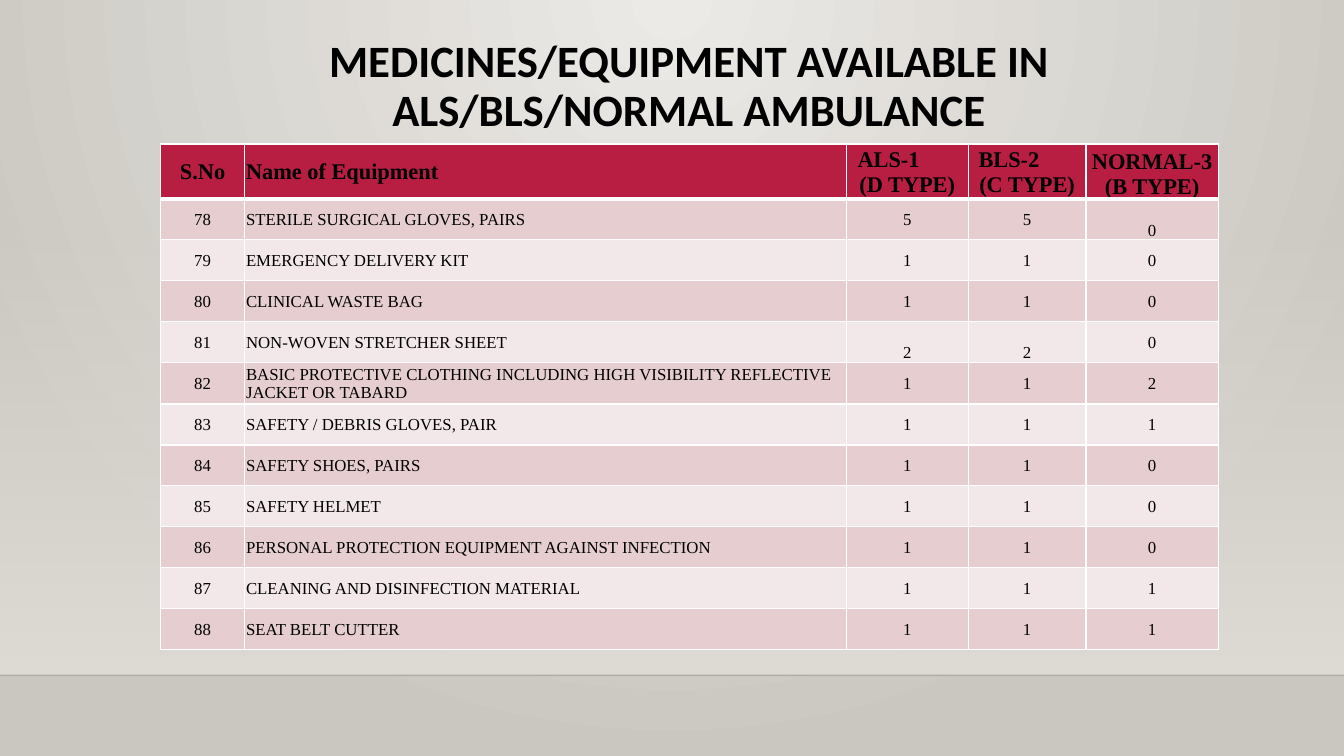
from lxml import etree
from pptx import Presentation
from pptx.dml.color import RGBColor
from pptx.enum.shapes import MSO_CONNECTOR, MSO_SHAPE
from pptx.enum.text import MSO_ANCHOR, PP_ALIGN
from pptx.oxml.ns import qn
from pptx.util import Cm, Pt

LEFT, CENTER = PP_ALIGN.LEFT, PP_ALIGN.CENTER
MIDDLE, BOTTOM = MSO_ANCHOR.MIDDLE, MSO_ANCHOR.BOTTOM
RECT, LINE = MSO_SHAPE.RECTANGLE, MSO_CONNECTOR.STRAIGHT

WIDE, HIGH = 33.87, 19.05
COLORS = {
    "glow": "ECEAE7", "edge": "CAC7C1", "wall": "DFDBD5", "floor": "000001",
    "text": "000000", "rule": "FFFFFF",
    "head": "B71E42", "odd": "E6CDCF", "even": "F3E8E9",
}
TITLE = "MEDICINES/EQUIPMENT AVAILABLE IN ALS/BLS/NORMAL AMBULANCE"
HEAD = ("S.No", "Name of Equipment", "ALS-1\n(D TYPE)", "BLS-2\n(C TYPE)",
        "NORMAL-3\n(B TYPE)")
FIRST = 78
ITEMS = (
    ("STERILE SURGICAL GLOVES, PAIRS", 5, 5, 0),
    ("EMERGENCY DELIVERY KIT", 1, 1, 0),
    ("CLINICAL WASTE BAG", 1, 1, 0),
    ("NON-WOVEN STRETCHER SHEET", 2, 2, 0),
    ("BASIC PROTECTIVE CLOTHING INCLUDING HIGH VISIBILITY REFLECTIVE "
     "JACKET OR TABARD", 1, 1, 2),
    ("SAFETY / DEBRIS GLOVES, PAIR", 1, 1, 1),
    ("SAFETY SHOES, PAIRS", 1, 1, 0),
    ("SAFETY HELMET", 1, 1, 0),
    ("PERSONAL PROTECTION EQUIPMENT AGAINST INFECTION", 1, 1, 0),
    ("CLEANING AND DISINFECTION MATERIAL", 1, 1, 1),
    ("SEAT BELT CUTTER", 1, 1, 1),
)
COLS = (2.13, 15.16, 3.07, 2.97, 3.33)
HEAD_ROW, ITEM_ROW = 1.28, 1.03
LOW = {(0, 4), (1, 4), (4, 2), (4, 3)}
INDENT = {"ALS-1": 0.25, "BLS-2": 0.23}


def color(name):
    return RGBColor.from_string(COLORS[name])


def place(box):
    return [Cm(n) for n in box]


def blend(fill, start, end):
    fill.gradient()
    for stop, name in zip(fill.gradient_stops, (start, end)):
        stop.color.rgb = color(name)


def fade(root, share):
    tint = next(root.iter(qn("a:srgbClr")))
    etree.SubElement(tint, qn("a:alpha"), val=str(share * 1000))


def style(para, size, face, bold, align):
    para.alignment = align
    font = para.font
    font.size, font.name, font.bold = Pt(size), face, bold
    font.color.rgb = color("text")


def add_back(slide):
    blend(slide.background.fill, "glow", "edge")
    grad = next(slide.element.iter(qn("a:gradFill")))
    grad.remove(grad.find(qn("a:lin")))
    ring = etree.SubElement(grad, qn("a:path"), path="circle")
    etree.SubElement(ring, qn("a:fillToRect"),
                     l="43000", t="0", r="43000", b="100000")


def add_wall(slide, box):
    left, top, width, height = place(box)
    wall = slide.shapes.add_shape(RECT, left, top, width, height)
    wall.shadow.inherit = False
    wall.line.fill.background()
    blend(wall.fill, "wall", "wall")
    wall.fill.gradient_angle = 270
    fade(wall.element.spPr, 0)

    base = top + height
    floor = slide.shapes.add_connector(LINE, left, base, left + width, base)
    floor.line.width = Pt(1)
    floor.line.color.rgb = color("floor")
    props = floor.element.spPr
    fade(props, 20)
    etree.SubElement(props, qn("a:effectLst"))


def add_title(slide, box):
    frame = slide.shapes.add_textbox(*place(box)).text_frame
    frame.word_wrap = True
    frame.vertical_anchor = MIDDLE
    frame.text = TITLE
    para = frame.paragraphs[0]
    para.line_spacing = 0.9
    style(para, 32, "Calibri", True, CENTER)


def add_rules(cell, row):
    props = cell._tc.get_or_add_tcPr()
    thick = {"T": row == 1, "B": row == 0}
    for side in "LRTB":
        width = Pt(3 if thick.get(side) else 1)
        rule = etree.SubElement(props, qn("a:ln" + side), w=str(width))
        fill = etree.SubElement(rule, qn("a:solidFill"))
        etree.SubElement(fill, qn("a:srgbClr"), val=COLORS["rule"])


def fill_cell(cell, row, col, text):
    add_rules(cell, row)
    cell.fill.solid()
    shade = "head" if row == 0 else "odd" if row % 2 else "even"
    cell.fill.fore_color.rgb = color(shade)
    cell.margin_left = cell.margin_right = cell.margin_top = Cm(0.03)
    cell.margin_bottom = 0
    cell.vertical_anchor = BOTTOM if (row, col) in LOW else MIDDLE
    cell.text = str(text)
    for para in cell.text_frame.paragraphs:
        inset = INDENT.get(para.text)
        align = LEFT if col == 1 or inset else CENTER
        style(para, 12 if row else 16, "Times New Roman", row == 0, align)
        if inset:
            para._p.get_or_add_pPr().set("marL", str(Cm(inset)))


def add_stock(slide, left, top):
    rows = [HEAD] + [(FIRST + n, *item) for n, item in enumerate(ITEMS)]
    box = (left, top, sum(COLS), HEAD_ROW + ITEM_ROW * len(ITEMS))
    table = slide.shapes.add_table(len(rows), len(COLS), *place(box)).table
    for col, width in zip(table.columns, COLS):
        col.width = Cm(width)
    for r, row in enumerate(rows):
        table.rows[r].height = Cm(ITEM_ROW if r else HEAD_ROW)
        for c, text in enumerate(row):
            fill_cell(table.cell(r, c), r, c, text)


def main():
    deck = Presentation()
    deck.slide_width, deck.slide_height = Cm(WIDE), Cm(HIGH)
    slide = deck.slides.add_slide(deck.slide_layouts[6])
    add_back(slide)
    add_wall(slide, (0, 5.61, WIDE, 11.41))
    add_title(slide, (4.04, 0.74, 26.66, 2.92))
    add_stock(slide, 4.04, 3.63)
    deck.save("out.pptx")


if __name__ == "__main__":
    main()
